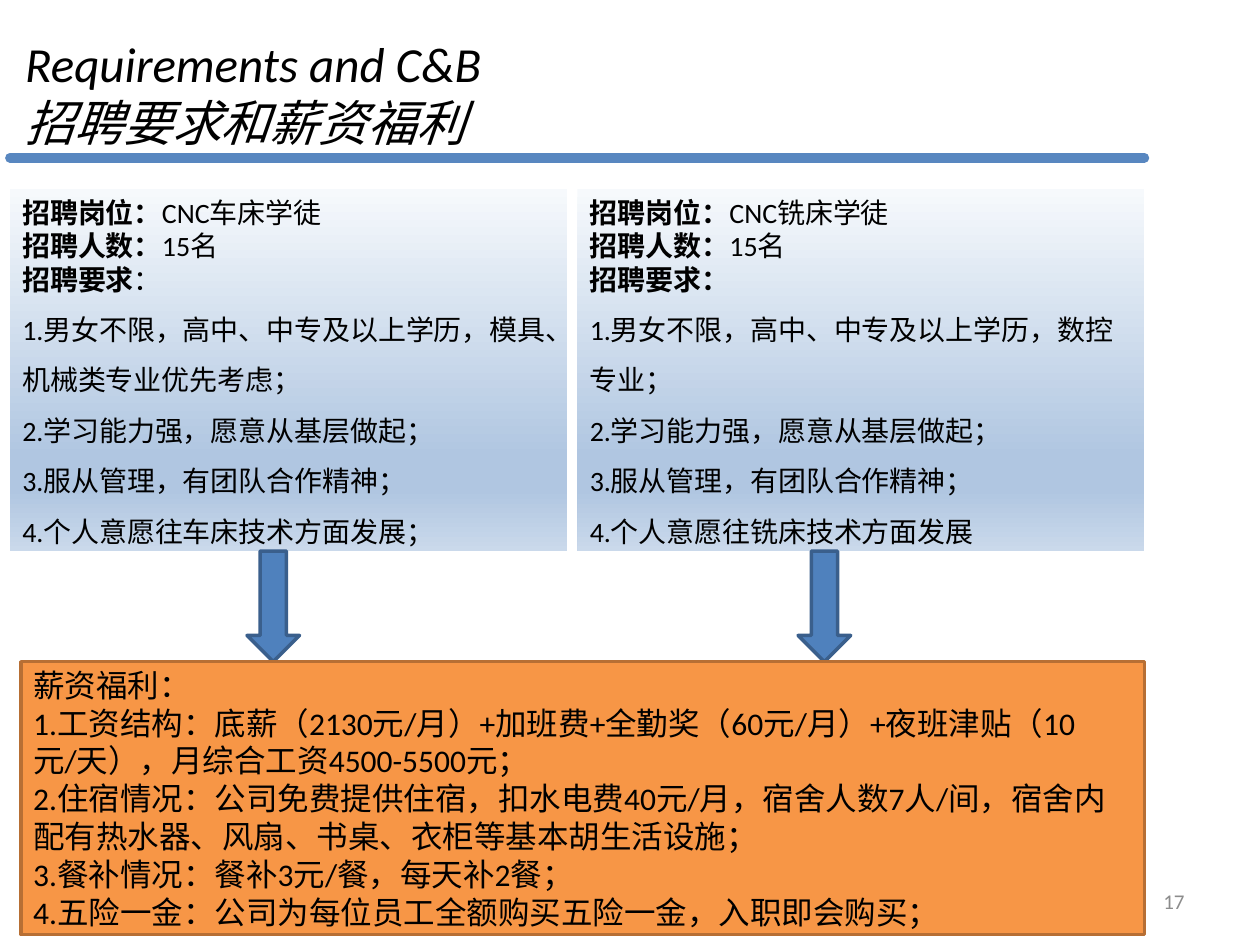
from lxml.etree import SubElement
from pptx import Presentation
from pptx.dml.color import RGBColor
from pptx.enum.lang import MSO_LANGUAGE_ID
from pptx.enum.shapes import MSO_CONNECTOR, MSO_SHAPE
from pptx.enum.text import MSO_ANCHOR, PP_ALIGN
from pptx.oxml.ns import qn
from pptx.util import Cm, Pt

FONT = "Calibri"
BLACK = "000000"
PANEL_STOPS = [(0, "F6F9FC"), (74, "B0C6E1"), (83, "B0C6E1"), (100, "CAD9EB")]


def color(value):
    return RGBColor.from_string(value)


def add_run(paragraph, text, size, bold=False, italic=False, fill=BLACK):
    run = paragraph.add_run()
    run.text = text
    font = run.font
    font.name = FONT
    font.size = Pt(size)
    font.bold = bold
    font.italic = italic
    font.color.rgb = color(fill)
    font.language_id = MSO_LANGUAGE_ID.SIMPLIFIED_CHINESE


def write(frame, lines, size):
    frame.word_wrap = True
    for index, (spacing, runs) in enumerate(lines):
        paragraph = frame.paragraphs[0] if index == 0 else frame.add_paragraph()
        paragraph.alignment = PP_ALIGN.LEFT
        paragraph.line_spacing = spacing
        for text, bold in runs:
            add_run(paragraph, text, size, bold)


def add_block(slide, kind, box, fill=None, outline=None):
    block = slide.shapes.add_shape(kind, *map(Cm, box))
    block.shadow.inherit = False
    if fill:
        block.fill.solid()
        block.fill.fore_color.rgb = color(fill)
    if outline:
        block.line.color.rgb = color(outline)
        block.line.width = Pt(2)
    else:
        block.line.fill.background()
    return block


def fill_gradient(block, stops):
    block.fill.gradient()
    block.fill.gradient_angle = 270
    stop_list = block._element.spPr.find(qn("a:gradFill")).find(qn("a:gsLst"))
    for stop in list(stop_list):
        stop_list.remove(stop)
    for percent, value in stops:
        stop = SubElement(stop_list, qn("a:gs"), pos=str(percent * 1000))
        SubElement(stop, qn("a:srgbClr"), val=value)


def add_heading(slide, box, english, chinese):
    left, top, width, height = box
    heading = slide.shapes.add_textbox(*map(Cm, box))
    frame = heading.text_frame
    frame.word_wrap = True
    frame.vertical_anchor = MSO_ANCHOR.BOTTOM
    frame.margin_left = Cm(0.51)
    paragraph = frame.paragraphs[0]
    add_run(paragraph, english, 28, italic=True)
    paragraph.add_line_break()
    add_run(paragraph, chinese, 28, italic=True)

    rule_y = Cm(top + height)
    rule = slide.shapes.add_connector(
        MSO_CONNECTOR.STRAIGHT, Cm(left + 0.2), rule_y, Cm(left + 23.07), rule_y
    )
    rule.line.color.rgb = color("5887C0")
    rule.line.width = Pt(5.5)
    rule.line._get_or_add_ln().set("cap", "rnd")
    SubElement(rule._element.spPr, qn("a:effectLst"))


def add_job(slide, box, post, colon_bold, requirements):
    panel = add_block(slide, MSO_SHAPE.RECTANGLE, box)
    fill_gradient(panel, PANEL_STOPS)
    panel.text_frame.vertical_anchor = MSO_ANCHOR.TOP
    facts = [
        (1.0, [("招聘岗位：", True), (post, False)]),
        (1.0, [("招聘人数：", True), ("15名", False)]),
        (1.0, [("招聘要求", True), ("：", colon_bold)]),
    ]
    demands = [
        (1.5, [(f"{number}.{text}", False)])
        for number, text in enumerate(requirements, 1)
    ]
    write(panel.text_frame, facts + demands, 16)


def add_benefits(slide, box, heading, items):
    panel = add_block(slide, MSO_SHAPE.RECTANGLE, box, "F79646", "B76F34")
    panel.text_frame.vertical_anchor = MSO_ANCHOR.MIDDLE
    texts = [heading] + [f"{number}.{text}" for number, text in enumerate(items, 1)]
    write(panel.text_frame, [(1.0, [(text, False)]) for text in texts], 18)


def add_page_number(slide, box, number):
    label = slide.shapes.add_textbox(*map(Cm, box))
    label.text_frame.word_wrap = True
    label.text_frame.vertical_anchor = MSO_ANCHOR.MIDDLE
    paragraph = label.text_frame.paragraphs[0]
    paragraph.alignment = PP_ALIGN.RIGHT
    add_run(paragraph, number, 12, fill="8C8C8C")


def main():
    deck = Presentation()
    deck.slide_width, deck.slide_height = Cm(25.4), Cm(19.05)
    slide = deck.slides.add_slide(deck.slide_layouts[6])

    add_heading(slide, (0, 0, 19.05, 3.18), "Requirements and C&B", "招聘要求和薪资福利")
    add_page_number(slide, (18.2, 17.66, 5.93, 1.01), "17")

    shared = ["学习能力强，愿意从基层做起；", "服从管理，有团队合作精神；"]
    jobs_top, jobs_height, benefits_top = 3.81, 7.3, 13.34
    jobs_bottom = jobs_top + jobs_height
    jobs = [
        (0.2, 11.23, 4.98, "CNC车床学徒", False,
         "男女不限，高中、中专及以上学历，模具、机械类专业优先考虑；",
         "个人意愿往车床技术方面发展；"),
        (11.64, 11.43, 16.09, "CNC铣床学徒", True,
         "男女不限，高中、中专及以上学历，数控专业；",
         "个人意愿往铣床技术方面发展"),
    ]
    for left, width, arrow_left, post, colon_bold, education, ambition in jobs:
        add_job(slide, (left, jobs_top, width, jobs_height), post, colon_bold,
                [education, *shared, ambition])
        arrow_box = (arrow_left, jobs_bottom, 1.06, benefits_top - jobs_bottom)
        add_block(slide, MSO_SHAPE.DOWN_ARROW, arrow_box, "4F81BD", "3A5F8C")

    add_benefits(slide, (0.42, benefits_top, 22.65, 5.5), "薪资福利：", [
        "工资结构：底薪（2130元/月）+加班费+全勤奖（60元/月）+夜班津贴（10元/天），月综合工资4500-5500元；",
        "住宿情况：公司免费提供住宿，扣水电费40元/月，宿舍人数7人/间，宿舍内配有热水器、风扇、书桌、衣柜等基本胡生活设施；",
        "餐补情况：餐补3元/餐，每天补2餐；",
        "五险一金：公司为每位员工全额购买五险一金，入职即会购买；",
    ])
    deck.save("out.pptx")


if __name__ == "__main__":
    main()
